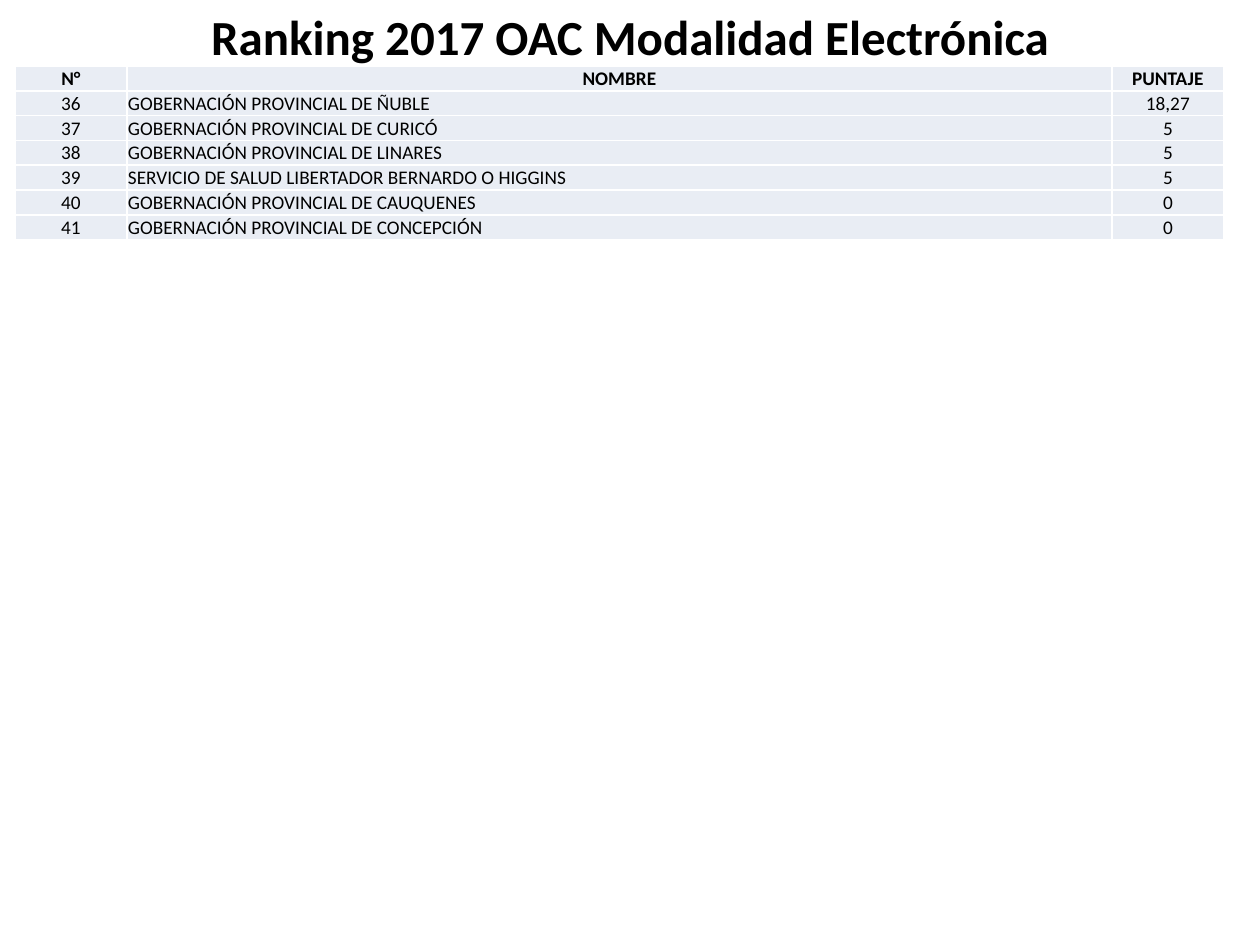
from lxml import etree
from pptx import Presentation
from pptx.dml.color import RGBColor
from pptx.enum.text import MSO_ANCHOR, PP_ALIGN
from pptx.oxml.ns import qn
from pptx.util import Pt

EMU_PER_INCH = 914400
PX_PER_INCH = 126
LEFT, CENTER = PP_ALIGN.LEFT, PP_ALIGN.CENTER
MIDDLE, BOTTOM = MSO_ANCHOR.MIDDLE, MSO_ANCHOR.BOTTOM

HEADER = ("N°", "NOMBRE", "PUNTAJE")
RANKING = [
    ("36", "GOBERNACIÓN PROVINCIAL DE ÑUBLE", "18,27"),
    ("37", "GOBERNACIÓN PROVINCIAL DE CURICÓ", "5"),
    ("38", "GOBERNACIÓN PROVINCIAL DE LINARES", "5"),
    ("39", "SERVICIO DE SALUD LIBERTADOR BERNARDO O HIGGINS", "5"),
    ("40", "GOBERNACIÓN PROVINCIAL DE CAUQUENES", "0"),
    ("41", "GOBERNACIÓN PROVINCIAL DE CONCEPCIÓN", "0"),
]


def px(length):
    return round(length * EMU_PER_INCH / PX_PER_INCH)


def color(hex_value):
    return RGBColor.from_string(hex_value)


class SlideBuilder:
    """Holds the slide and its style."""

    font = "Calibri"
    ink = "000000"
    cell_fill = "E9EDF4"
    border = "FFFFFF"

    def __init__(self, slide):
        self.slide = slide

    def set_text(self, frame, text, size, bold, align):
        para = frame.paragraphs[0]
        para.text = text
        para.alignment = align
        para.font.name = self.font
        para.font.size = Pt(size)
        para.font.bold = bold
        para.font.color.rgb = color(self.ink)

    def title(self, text, left, top, width, height):
        box = self.slide.shapes.add_textbox(px(left), px(top), px(width), px(height))
        box.text_frame.word_wrap = True
        self.set_text(box.text_frame, text, 28, True, CENTER)

    def table(self, rows, left, top, widths, row_height):
        """Add a table whose first row is the header."""
        table = self.slide.shapes.add_table(
            len(rows), len(widths), px(left), px(top),
            px(sum(widths)), px(row_height * len(rows))).table
        for column, width in zip(table.columns, widths):
            column.width = px(width)
        for row_index, values in enumerate(rows):
            table.rows[row_index].height = px(row_height)
            for column_index, value in enumerate(values):
                is_header = row_index == 0
                align = LEFT if column_index == 1 and not is_header else CENTER
                cell = table.cell(row_index, column_index)
                self.style_cell(cell)
                cell.vertical_anchor = MIDDLE if is_header or column_index == 0 else BOTTOM
                self.set_text(cell.text_frame, value, 11, is_header, align)

    def style_cell(self, cell):
        cell.margin_left = cell.margin_right = cell.margin_top = px(1)
        cell.margin_bottom = 0
        properties = cell._tc.get_or_add_tcPr()
        for side in ("a:lnL", "a:lnR", "a:lnT", "a:lnB"):
            line = etree.SubElement(properties, qn(side), w=str(Pt(1)))
            fill = etree.SubElement(line, qn("a:solidFill"))
            etree.SubElement(fill, qn("a:srgbClr"), val=self.border)
        cell.fill.solid()
        cell.fill.fore_color.rgb = color(self.cell_fill)


def main():
    deck = Presentation()
    deck.slide_width, deck.slide_height = px(1260), px(945)
    page = SlideBuilder(deck.slides.add_slide(deck.slide_layouts[6]))
    page.table([HEADER, *RANKING], 15, 66, (112, 985, 112), 24)
    page.title("Ranking 2017 OAC Modalidad Electrónica", 0, 0, 1260, 72)
    deck.save("out.pptx")


if __name__ == "__main__":
    main()
